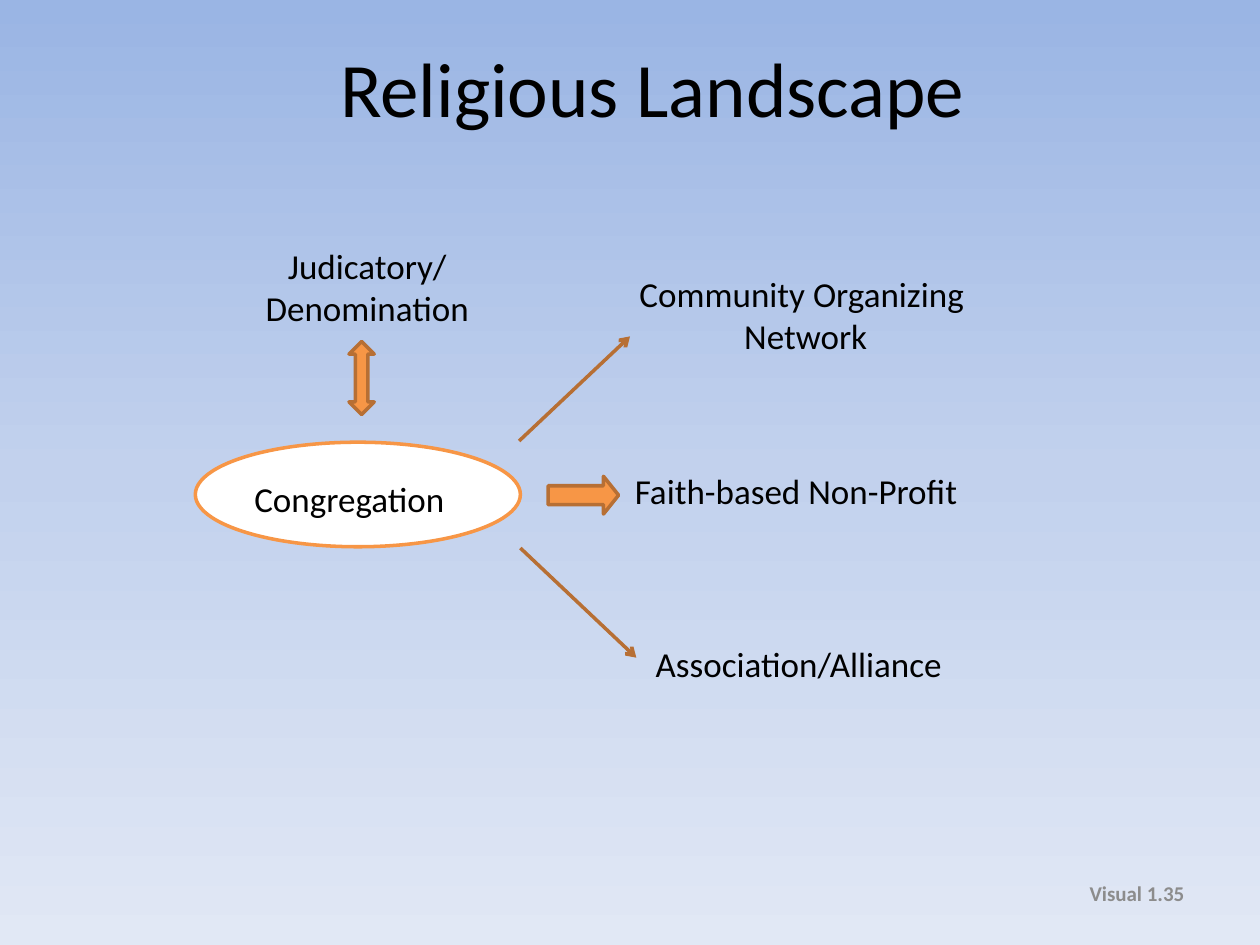
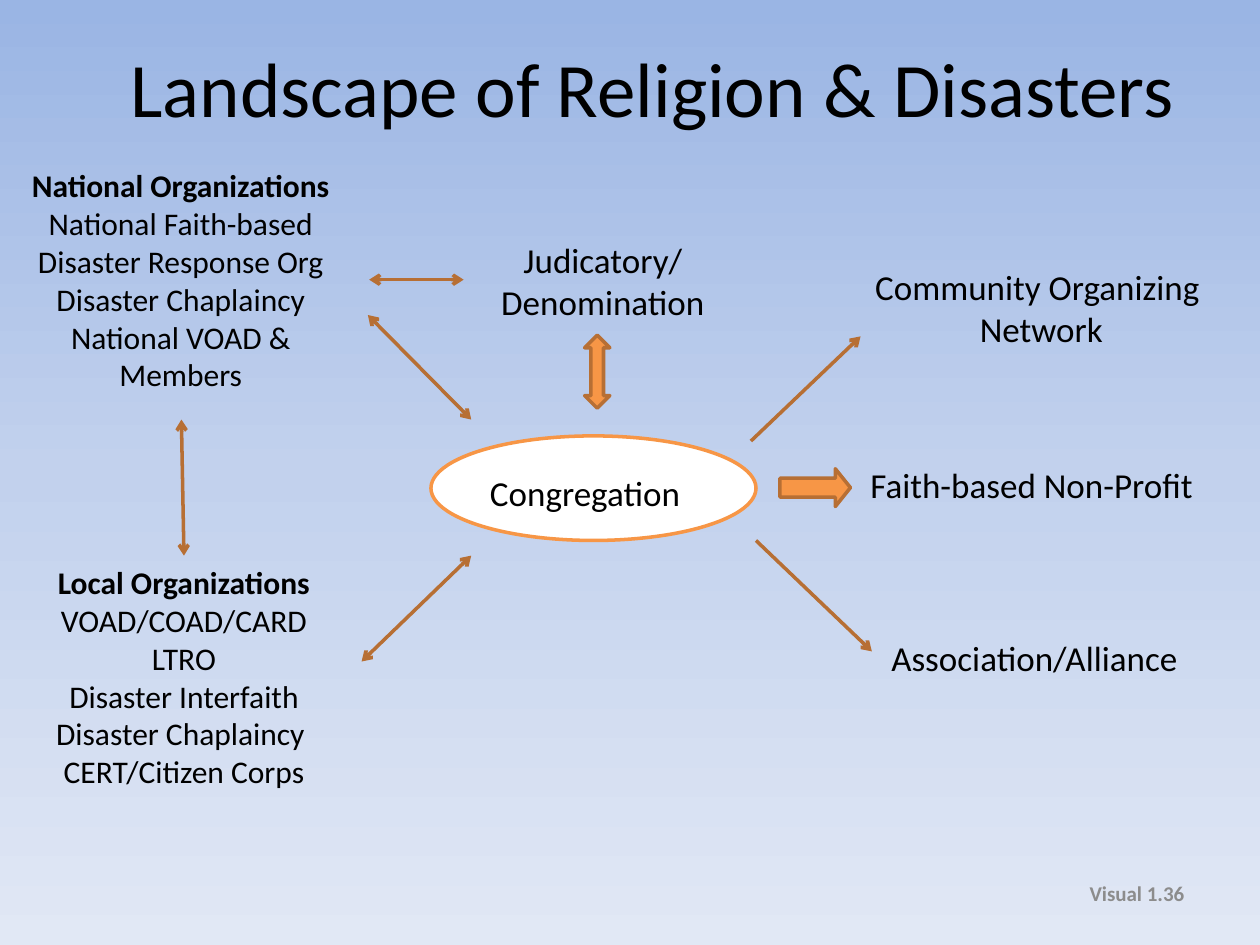
from dataclasses import dataclass

from lxml import etree
from pptx import Presentation
from pptx.dml.color import RGBColor
from pptx.enum.shapes import MSO_CONNECTOR, MSO_SHAPE
from pptx.enum.text import MSO_ANCHOR, MSO_AUTO_SIZE, PP_ALIGN
from pptx.oxml.ns import qn
from pptx.util import Inches, Pt

STRAIGHT = MSO_CONNECTOR.STRAIGHT
OVAL, DOUBLE_ARROW, DOWN_ARROW = MSO_SHAPE.OVAL, MSO_SHAPE.UP_DOWN_ARROW, MSO_SHAPE.DOWN_ARROW
LEFT, CENTER, RIGHT = PP_ALIGN.LEFT, PP_ALIGN.CENTER, PP_ALIGN.RIGHT
TOP, MIDDLE = MSO_ANCHOR.TOP, MSO_ANCHOR.MIDDLE
FIT_SHAPE, NO_FIT = MSO_AUTO_SIZE.SHAPE_TO_FIT_TEXT, MSO_AUTO_SIZE.NONE

FONT = "Calibri"
BLACK, WHITE, GREY = "000000", "FFFFFF", "8C8C8C"
ORANGE, BROWN = "F79646", "B76F34"
BACKGROUND_STOPS = ((0, "9AB5E4"), (50, "C2D1ED"), (100, "E1E8F5"))
LINE_WIDTH = 2


@dataclass
class Label:
    left: float
    top: float
    width: float
    height: float
    lines: tuple[str, ...]
    align: PP_ALIGN = CENTER
    anchor: MSO_ANCHOR = TOP
    size: int = 20
    color: str = BLACK
    wrap: bool = False
    bold_lines: int = 0
    grow: bool = True


@dataclass
class Arrow:
    start: tuple[float, float]
    end: tuple[float, float]
    both_ends: bool = False


@dataclass
class Page:
    title: str
    number: str
    shift: tuple[float, float]  # where the congregation diagram sits
    nonprofit_arrow: tuple[float, float]
    arrows: tuple[Arrow, ...]
    labels: tuple[Label, ...] = ()


# The diagram both slides share, at its unshifted place
DIAGRAM_LABELS = (
    Label(1.92, 3.74, 1.89, 0.44, ("Congregation",), LEFT),
    Label(1.95, 1.89, 1.93, 0.77, ("Judicatory/", "Denomination")),
    Label(4.94, 3.68, 3.02, 0.44, ("Faith-based Non-Profit",), LEFT),
    Label(4.96, 5.05, 2.76, 0.44, ("Association/Alliance",), wrap=True),
    Label(4.83, 2.11, 3.13, 0.77, ("Community Organizing ", "Network")),
)

PAGES = (
    Page(
        "Religious Landscape", "Visual 1.35", (0, 0), (4.48, 3.65),
        (Arrow((4.12, 3.5), (5, 2.67)), Arrow((4.13, 4.35), (5.05, 5.22))),
    ),
    Page(
        "Landscape of Religion & Disasters", "Visual 1.36", (1.87, -0.05), (6.32, 3.59),
        (
            Arrow((5.96, 3.5), (6.83, 2.67)),
            Arrow((6, 4.29), (6.92, 5.17)),
            Arrow((1.44, 3.33), (1.46, 4.41), True),
            Arrow((2.87, 5.25), (3.74, 4.41), True),
            Arrow((2.93, 2.22), (3.68, 2.22), True),
            Arrow((2.92, 2.5), (3.74, 3.33), True),
        ),
        (
            Label(0, 1.11, 2.87, 2.22,
                  ("National Organizations", "National Faith-based Disaster Response Org",
                   "Disaster Chaplaincy", "National VOAD & Members"),
                  anchor=MIDDLE, size=18, wrap=True, bold_lines=1),
            Label(0, 4.41, 2.92, 1.92,
                  ("Local Organizations", "VOAD/COAD/CARD", "LTRO", "Disaster Interfaith",
                   "Disaster Chaplaincy ", "CERT/Citizen Corps"),
                  anchor=MIDDLE, size=18, wrap=True, bold_lines=1),
        ),
    ),
)


def rgb(color: str) -> RGBColor:
    return RGBColor.from_string(color)


def add_span(para, text: str, size: int, color: str, bold: bool = False) -> None:
    span = para.add_run()
    span.text = text
    span.font.name = FONT
    span.font.size = Pt(size)
    span.font.bold = bold
    span.font.color.rgb = rgb(color)


def set_background(master) -> None:
    fill = master.background.fill
    fill.gradient()
    fill.gradient_angle = 270
    stops = master.element.find(".//" + qn("p:bgPr")).find(".//" + qn("a:gsLst"))
    for stop in list(stops):
        stops.remove(stop)
    for percent, color in BACKGROUND_STOPS:
        stop = etree.SubElement(stops, qn("a:gs"), pos=str(percent * 1000))
        etree.SubElement(stop, qn("a:srgbClr"), val=color)


def add_title(slide, text: str) -> None:
    title = slide.shapes.title
    title.left, title.top = Inches(0.5), Inches(0.3)
    title.width, title.height = Inches(9.36), Inches(0.78)
    frame = title.text_frame
    frame.auto_size = NO_FIT
    frame.vertical_anchor = MIDDLE
    frame.margin_top = frame.margin_bottom = Inches(0.06)
    para = frame.paragraphs[0]
    para.alignment = CENTER
    add_span(para, text, 44, BLACK)


def add_label(slide, label: Label, shift: tuple[float, float] = (0, 0)) -> None:
    box = slide.shapes.add_textbox(
        Inches(label.left + shift[0]), Inches(label.top + shift[1]),
        Inches(label.width), Inches(label.height))
    frame = box.text_frame
    frame.word_wrap = label.wrap
    frame.auto_size = FIT_SHAPE if label.grow else NO_FIT
    frame.vertical_anchor = label.anchor
    for index, line in enumerate(label.lines):
        para = frame.add_paragraph() if index else frame.paragraphs[0]
        para.alignment = label.align
        add_span(para, line, label.size, label.color, index < label.bold_lines)


def add_figure(slide, kind: MSO_SHAPE, left: float, top: float, width: float,
               height: float, fill: str, line: str):
    figure = slide.shapes.add_shape(
        kind, Inches(left), Inches(top), Inches(width), Inches(height))
    figure.shadow.inherit = False
    figure.fill.solid()
    figure.fill.fore_color.rgb = rgb(fill)
    figure.line.color.rgb = rgb(line)
    figure.line.width = Pt(LINE_WIDTH)
    return figure


def add_arrow(slide, arrow: Arrow) -> None:
    points = (Inches(value) for value in arrow.start + arrow.end)
    connector = slide.shapes.add_connector(STRAIGHT, *points)
    connector.line.color.rgb = rgb(BROWN)
    connector.line.width = Pt(LINE_WIDTH)
    properties = connector.element.spPr
    outline = properties.find(qn("a:ln"))
    for end in ("a:headEnd", "a:tailEnd") if arrow.both_ends else ("a:tailEnd",):
        etree.SubElement(outline, qn(end), type="arrow")
    etree.SubElement(properties, qn("a:effectLst"))


def add_diagram(slide, page: Page) -> None:
    across, down = page.shift
    add_figure(slide, OVAL, 1.55 + across, 3.51 + down, 2.58, 0.83, WHITE, ORANGE)
    for label in DIAGRAM_LABELS:
        add_label(slide, label, page.shift)
    add_figure(slide, DOUBLE_ARROW, 2.77 + across, 2.71 + down, 0.2, 0.58, ORANGE, BROWN)
    block = add_figure(slide, DOWN_ARROW, *page.nonprofit_arrow, 0.3, 0.56, ORANGE, BROWN)
    block.rotation = 270
    block.adjustments[1] = 0.4


def build_page(deck, page: Page) -> None:
    slide = deck.slides.add_slide(deck.slide_layouts.get_by_name("Title Only"))
    add_title(slide, page.title)
    add_diagram(slide, page)
    for label in page.labels:
        add_label(slide, label)
    for arrow in page.arrows:
        add_arrow(slide, arrow)
    # Footer
    add_label(slide, Label(7.17, 6.83, 2.33, 0.52, (page.number,), RIGHT, MIDDLE, 12,
                           GREY, wrap=True, bold_lines=1, grow=False))


def main() -> None:
    deck = Presentation()
    deck.slide_width, deck.slide_height = Inches(10), Inches(7.5)
    set_background(deck.slide_master)
    for page in PAGES:
        build_page(deck, page)
    deck.save("out.pptx")


if __name__ == "__main__":
    main()
